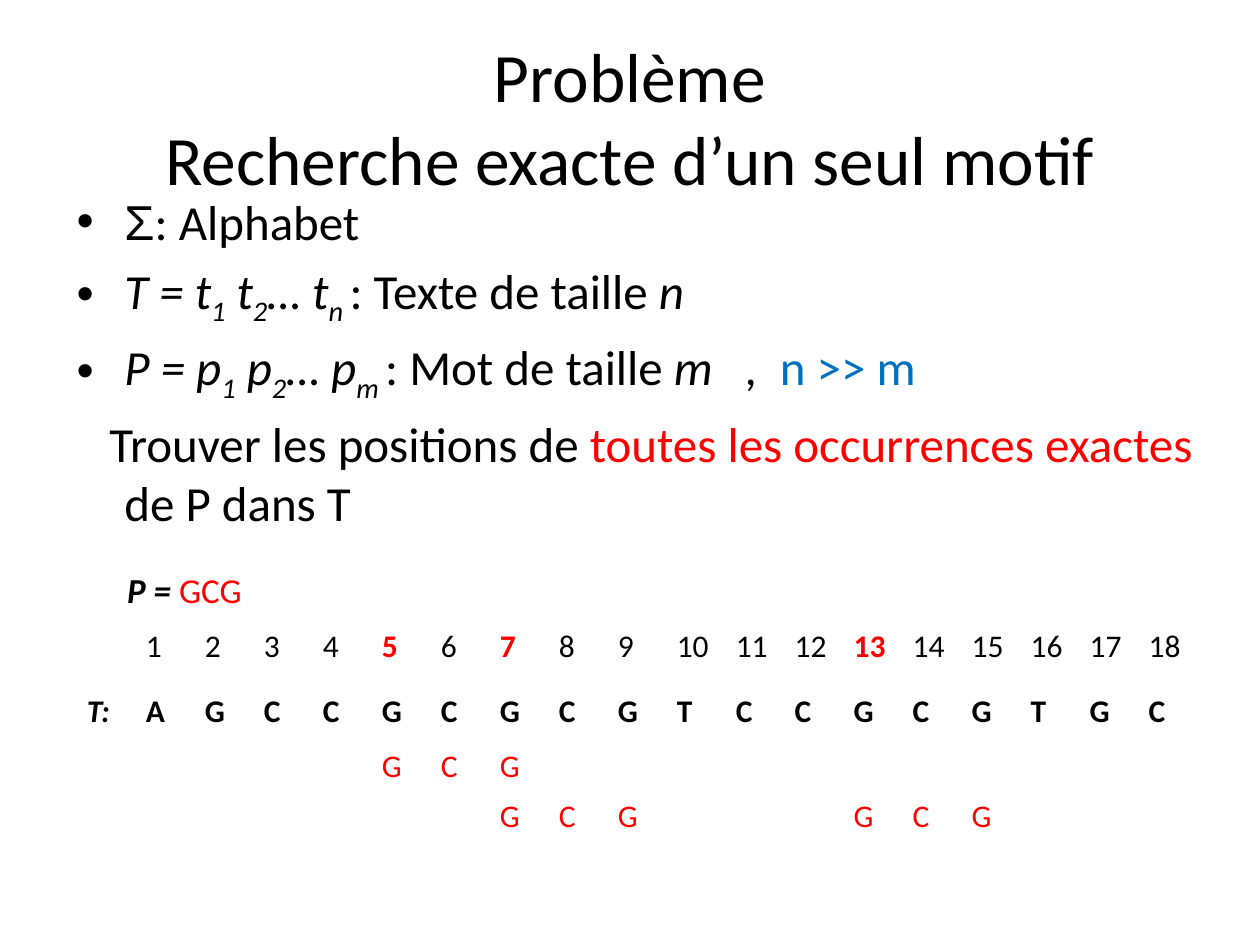
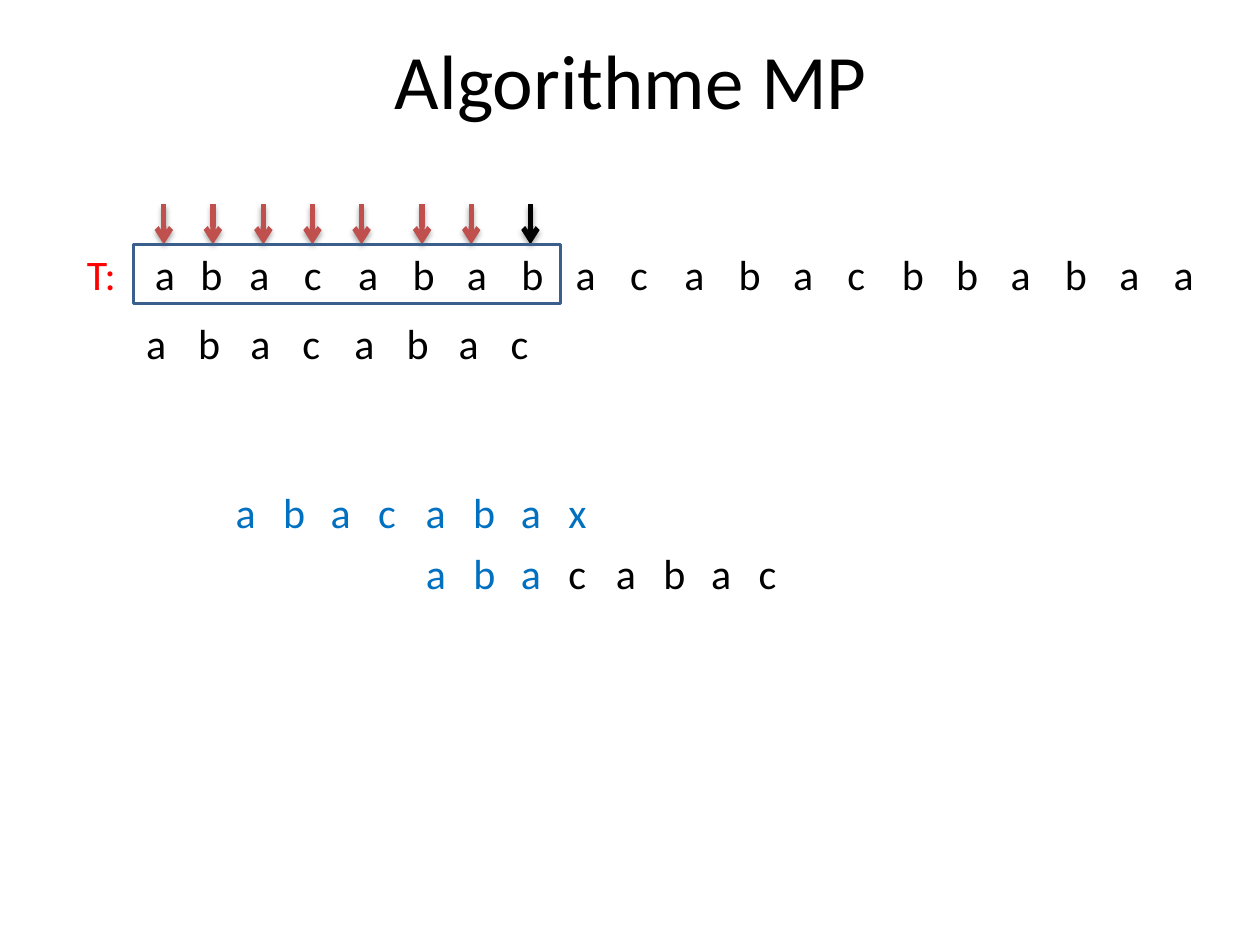
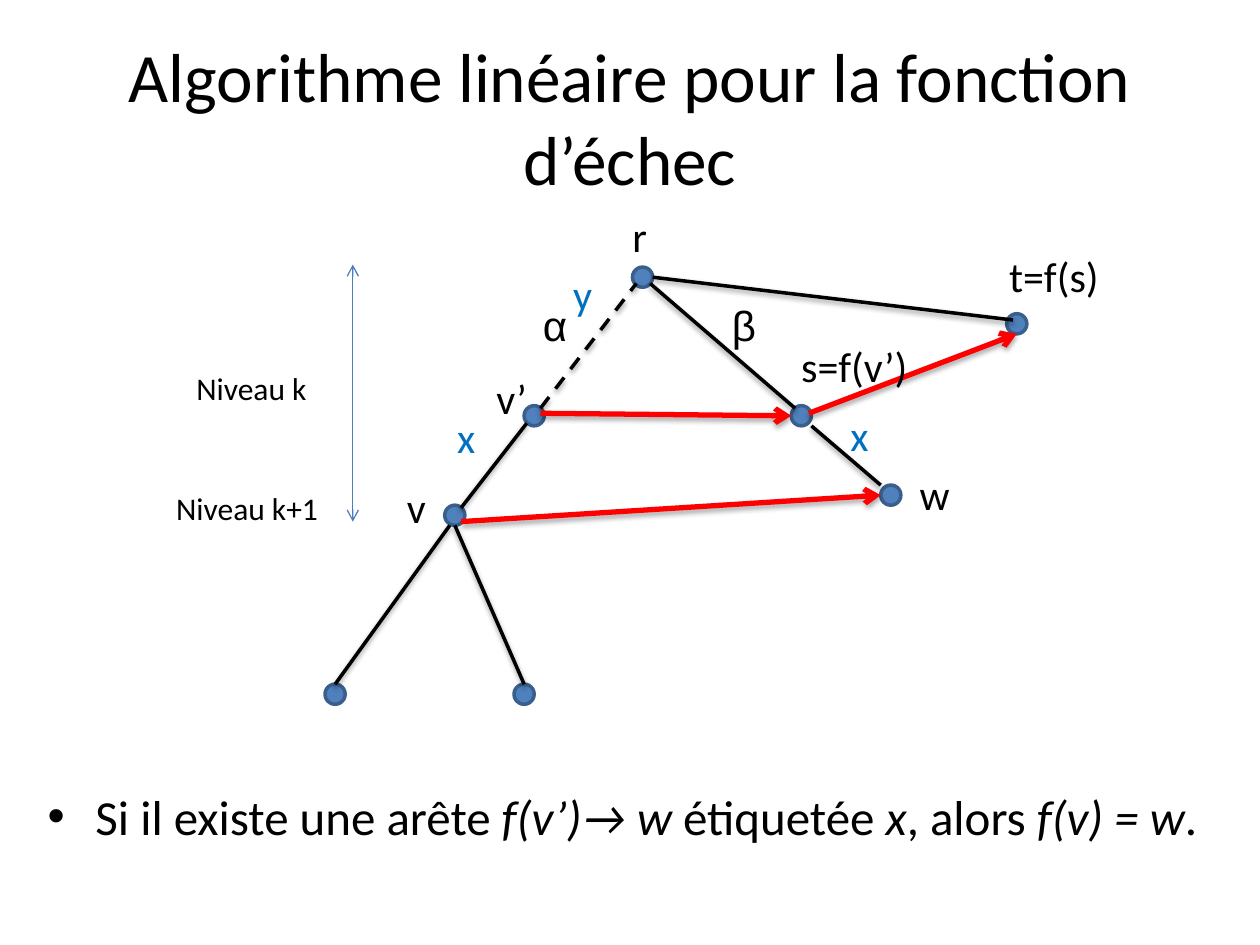
import pptx
import pptx.util
import pptx.dml.color
import pptx.enum.dml
import pptx.enum.shapes
import pptx.enum.text
import pptx.oxml.ns
import lxml.etree

Inches = pptx.util.Inches
Pt = pptx.util.Pt

COLORS = {
    "text": "000000",
    "red": "FF0000",
    "blue": "0070C0",
    "match": "C0504D",
    "node": "4F81BD",
    "outline": "3A5F8C",
    "level": "4B7EBC",
}
FONT = "Calibri"
GREEK_FONT = "Arial"
NO_STYLE_NO_GRID = "{2D5ABB26-0587-4C30-8999-92F81FD0307C}"
ITALIC = {"italic": True}
SUB = {"italic": True, "baseline": -25}
RED = {"color": "red"}
BLUE = {"color": "blue"}
BOLD = {"bold": True}
NODE_SIZE = 0.16


def rgb(name):
    return pptx.dml.color.RGBColor.from_string(COLORS[name])


def add_xml(parent, tag, **attributes):
    child = lxml.etree.SubElement(parent, pptx.oxml.ns.qn(tag))
    for key, value in attributes.items():
        child.set(key, str(value))
    return child


def format_run(run, size, color="text", font=FONT, bold=False, italic=False, baseline=0, spacing=0):
    run.font.size = Pt(size)
    run.font.name = font
    run.font.bold = bold
    run.font.italic = italic
    run.font.color.rgb = rgb(color)
    properties = run.font._element
    if baseline:
        properties.set("baseline", str(baseline * 1000))
    if spacing:
        properties.set("spc", str(round(spacing * 100)))


def write_runs(paragraph, size, runs):
    for text, style in runs:
        run = paragraph.add_run()
        run.text = text
        format_run(run, size, **style)


def add_frame(slide, left, top, width, height, wrap=True):
    frame = slide.shapes.add_textbox(
        Inches(left), Inches(top), Inches(width), Inches(height)).text_frame
    frame.word_wrap = wrap
    return frame


def add_title(slide, text, left=0.5, top=0.3, size=39.6):
    frame = add_frame(slide, left, top, 9, 1.25)
    frame.vertical_anchor = pptx.enum.text.MSO_ANCHOR.MIDDLE
    paragraph = frame.paragraphs[0]
    paragraph.text = text
    paragraph.alignment = pptx.enum.text.PP_ALIGN.CENTER
    for run in paragraph.runs:
        format_run(run, size)


def add_body(slide, left, top, width, height, items):
    frame = add_frame(slide, left, top, width, height)
    for index, (bullet, first_indent, runs) in enumerate(items):
        paragraph = frame.add_paragraph() if index else frame.paragraphs[0]
        paragraph.space_before = Pt(5.6)
        write_runs(paragraph, 28, runs)
        properties = paragraph._p.get_or_add_pPr()
        properties.set("marL", str(Inches(0.38)))
        properties.set("indent", str(Inches(first_indent)))
        if bullet:
            add_xml(properties, "a:buFont", typeface="Arial")
            add_xml(properties, "a:buChar", char="•")
        else:
            add_xml(properties, "a:buNone")


def add_label(slide, left, top, width, runs, size=24, height=0.5):
    frame = add_frame(slide, left, top, width, height, wrap=False)
    frame.auto_size = pptx.enum.text.MSO_AUTO_SIZE.SHAPE_TO_FIT_TEXT
    write_runs(frame.paragraphs[0], size, runs)


def add_letter_grid(slide, left, top, width, row_heights, rows, size, first_widths=()):
    columns = len(rows[0])
    table = slide.shapes.add_table(
        len(rows), columns, Inches(left), Inches(top),
        Inches(width), Inches(sum(row_heights))).table
    table.first_row = False
    table.horz_banding = False
    table._tbl.tblPr.find(pptx.oxml.ns.qn("a:tableStyleId")).text = NO_STYLE_NO_GRID
    shared = (width - sum(first_widths)) / (columns - len(first_widths))
    for index, column in enumerate(table.columns):
        column.width = Inches(first_widths[index] if index < len(first_widths) else shared)
    for row, height, letters in zip(table.rows, row_heights, rows):
        row.height = Inches(height)
        for cell, (text, style) in zip(row.cells, letters):
            cell.fill.background()
            if text:
                write_runs(cell.text_frame.paragraphs[0], size, [(text, style)])


def add_line(slide, start, end, color="text", width=2.0, arrow=False, dashed=False, shadow=True):
    line = slide.shapes.add_connector(
        pptx.enum.shapes.MSO_CONNECTOR.STRAIGHT, *(Inches(value) for value in start + end))
    line.line.color.rgb = rgb(color)
    line.line.width = Pt(width)
    if dashed:
        line.line.dash_style = pptx.enum.dml.MSO_LINE.DASH
    properties = line._element.spPr
    if arrow:
        add_xml(properties.find(pptx.oxml.ns.qn("a:ln")), "a:tailEnd", type="arrow")
    effects = add_xml(properties, "a:effectLst")
    if shadow:
        distance, opacity = (1.8, 35) if arrow else (1.6, 38)
        outer = add_xml(effects, "a:outerShdw", blurRad=Pt(3.1), dist=Pt(distance),
                        dir=5400000, rotWithShape=0)
        add_xml(add_xml(outer, "a:srgbClr", val=COLORS["text"]), "a:alpha", val=opacity * 1000)


def add_outlined(slide, kind, left, top, width, height, fill=None):
    shape = slide.shapes.add_shape(kind, Inches(left), Inches(top), Inches(width), Inches(height))
    shape.shadow.inherit = False
    shape.line.color.rgb = rgb("outline")
    shape.line.width = Pt(2)
    if fill:
        shape.fill.solid()
        shape.fill.fore_color.rgb = rgb(fill)
    else:
        shape.fill.background()


def letters_of(word, style=None):
    return [(letter, style or {}) for letter in word]


def indexed_word(name, last):
    small = name.lower()
    return [(f"{name} = {small}", ITALIC), ("1", SUB), (f" {small}", ITALIC), ("2", SUB),
            (f"… {small}", ITALIC), (f"{last} ", SUB)]


def build_problem(slide):
    add_title(slide, "Problème\nRecherche exacte d’un seul motif")
    add_body(slide, 0.51, 1.47, 9.13, 2.83, [
        (True, -0.38, [("Σ", {"font": GREEK_FONT}), (": Alphabet", {})]),
        (True, -0.38, indexed_word("T", "n") + [(": Texte de taille ", {}), ("n", ITALIC)]),
        (True, -0.38, indexed_word("P", "m") + [
            (": Mot de taille ", {}), ("m", ITALIC), (" ", {"spacing": 12.6}),
            (",", ITALIC), (" ", {"spacing": 6.3}), ("n >> m", BLUE)]),
        (False, -0.12, [("Trouver les positions de ", {}),
                        ("toutes les occurrences exactes ", RED), ("de P dans T", {})]),
    ])

    text, pattern = "AGCCGCGCGTCCGCGTGC", "GCG"
    match_rows = [(5,), (7, 13)]
    starts = [start for row in match_rows for start in row]
    positions = [("", {})] + [
        (str(place), {"color": "red", "bold": True} if place in starts else {})
        for place in range(1, len(text) + 1)]
    rows = [positions, [("T:", {"bold": True, "italic": True})] + letters_of(text, BOLD)]
    for row_starts in match_rows:
        row = [("", {})] * len(positions)
        for start in row_starts:
            row[start:start + len(pattern)] = letters_of(pattern, RED)
        rows.append(row)
    add_letter_grid(slide, 0.59, 4.93, 8.9, [0.52, 0.43, 0.4, 0.4], rows, 18)
    add_label(slide, 0.91, 4.46, 1.11,
              [("P = ", {"bold": True, "italic": True}), (pattern, RED)], 20, 0.44)


def build_mp(slide):
    add_title(slide, "Algorithme MP", 0.51, 0, 44)
    text_row = [("T:", RED)] + letters_of("abacababacabacbbabaa")
    add_letter_grid(slide, 0.59, 1.94, 9.06, [0.63], [text_row], 24, (0.54, 0.36, 0.39))
    shifts = [
        (1.06, 2.49, 3.31, letters_of("abacabac")),
        (1.77, 3.83, 3.02, letters_of("abacabax", BLUE)),
        (3.28, 4.31, 3.02, letters_of("aba", BLUE) + letters_of("cabac")),
    ]
    for left, top, width, letters in shifts:
        add_letter_grid(slide, left, top, width, [0.63], [letters], 24)
    mismatch = 4.21
    for x in (1.3, 1.69, 2.09, 2.48, 2.87, 3.35, 3.74, mismatch):
        add_line(slide, (x, 1.62), (x, 1.94), "text" if x == mismatch else "match", 3, arrow=True)
    add_outlined(slide, pptx.enum.shapes.MSO_SHAPE.RECTANGLE, 1.06, 1.94, 3.39, 0.47)


def build_failure(slide):
    add_title(slide, "Algorithme linéaire pour la fonction d’échec")
    add_body(slide, 0.28, 6.19, 9.53, 0.98, [
        (True, -0.38, [("Si il existe une arête ", {}), ("f(v’)→ w ", ITALIC),
                       ("étiquetée ", {}), ("x", ITALIC), (", alors ", {}),
                       ("f(v) = w", ITALIC), (".", {})]),
    ])

    nodes = [(5.02, 2.12), (4.16, 3.22), (3.53, 4.01), (2.58, 5.43),
             (4.08, 5.43), (6.28, 3.22), (6.99, 3.85), (7.99, 2.49)]
    for left, top in nodes:
        add_outlined(slide, pptx.enum.shapes.MSO_SHAPE.OVAL, left, top, NODE_SIZE, NODE_SIZE, "node")

    add_line(slide, (4.29, 3.24), (5.05, 2.25), dashed=True)
    edges = [
        ((6.31, 3.24), (5.16, 2.25)),
        ((6.99, 3.85), (6.44, 3.38)),
        ((3.66, 4.03), (4.18, 3.36)),
        ((2.66, 5.43), (3.57, 4.17)),
        ((4.16, 5.43), (3.61, 4.17)),
        ((8.04, 2.54), (5.18, 2.2)),
    ]
    for start, end in edges:
        add_line(slide, start, end)
    failure_links = [
        ((4.29, 3.28), (6.28, 3.3)),
        ((3.66, 4.14), (6.99, 3.93)),
        ((6.42, 3.28), (8.07, 2.65)),
    ]
    for start, end in failure_links:
        add_line(slide, start, end, "red", 3, arrow=True)
    for start, end in ((2.25, 4.14), (4.06, 2.1)):
        add_line(slide, (2.8, start), (2.8, end), "level", 0.75, arrow=True, shadow=False)

    greek = {"font": GREEK_FONT}
    labels = [
        ("v", 3.13, 3.77, 0.35, {}),
        ("x", 3.53, 3.22, 0.35, BLUE),
        ("r", 4.92, 1.62, 0.32, {}),
        ("v’", 3.84, 2.91, 0.45, {}),
        ("x", 6.65, 3.2, 0.35, BLUE),
        ("w", 7.2, 3.67, 0.44, {}),
        ("t=f(s)", 7.91, 1.94, 0.92, {}),
        ("s=f(v’)", 6.26, 2.65, 1.06, {}),
        ("α", 4.21, 2.33, 0.41, greek),
        ("β", 5.71, 2.33, 0.39, greek),
        ("y", 4.45, 2.08, 0.35, BLUE),
    ]
    for text, left, top, width, style in labels:
        add_label(slide, left, top, width, [(text, style)])
    add_label(slide, 1.3, 3.83, 1.34, [("Niveau k+1", {})], 18, 0.4)
    add_label(slide, 1.46, 2.88, 1.09, [("Niveau k", {})], 18, 0.4)


def main():
    deck = pptx.Presentation()
    deck.slide_width = Inches(10)
    deck.slide_height = Inches(7.5)
    for build in (build_problem, build_mp, build_failure):
        build(deck.slides.add_slide(deck.slide_layouts[6]))
    deck.save("out.pptx")


if __name__ == "__main__":
    main()
